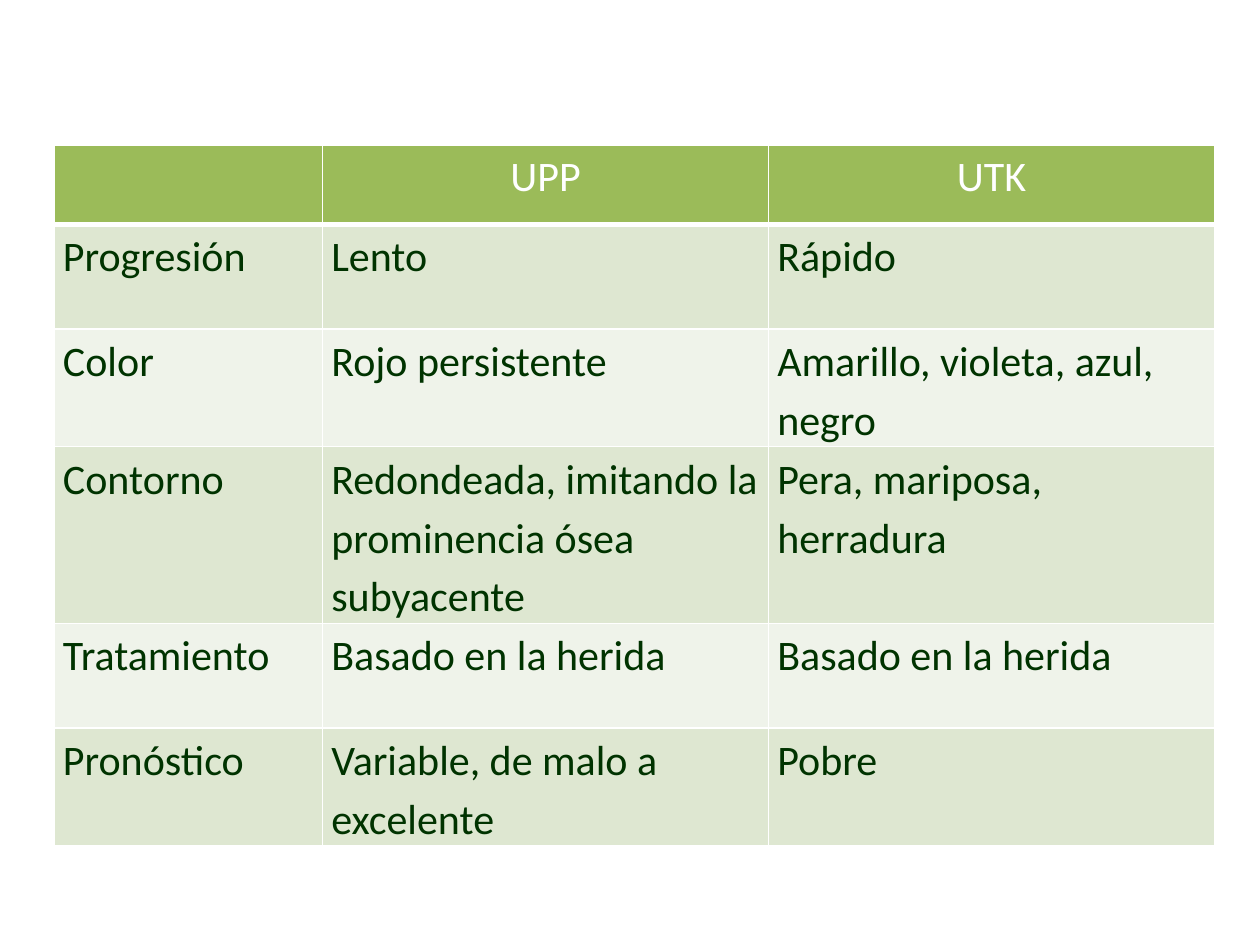
from dataclasses import dataclass

from lxml import etree
from pptx import Presentation, util as u
from pptx.dml.color import RGBColor
from pptx.enum import text
from pptx.oxml.ns import qn


@dataclass(frozen=True)
class Theme:
    font: str = "Calibri"
    size: int = 24
    header: str = "9BBB59"
    bands: tuple[str, str] = ("DEE7D1", "EFF3EA")
    ink: str = "003300"
    white: str = "FFFFFF"
    rule: float = 1
    header_rule: float = 3


@dataclass(frozen=True)
class Grid:
    """Table grid, in percent of the slide's width and height."""
    left: float
    top: float
    columns: tuple[float, ...]
    header_row: float
    body_row: float


@dataclass(frozen=True)
class CellStyle:
    fill: str
    ink: str
    bottom_rule: float
    frame: dict
    paragraph: dict


THEME = Theme()
GRID = Grid(4.3, 15.33, (21.3, 35.4, 35.4), 8.4, 11.07)

HEADER = CellStyle(THEME.header, THEME.white, THEME.header_rule, {},
                   {"alignment": text.PP_ALIGN.CENTER})
BODY = [
    CellStyle(fill, THEME.ink, THEME.rule,
              {"margin_left": u.Inches(0.07), "margin_right": u.Inches(0.07),
               "margin_top": 0, "margin_bottom": 0},
              {"line_spacing": 1.15})
    for fill in THEME.bands
]

ROWS = [
    ("", "UPP", "UTK"),
    ("Progresión", "Lento", "Rápido"),
    ("Color", "Rojo persistente", "Amarillo, violeta, azul, negro"),
    ("Contorno", "Redondeada, imitando la prominencia ósea subyacente",
     "Pera, mariposa, herradura"),
    ("Tratamiento", "Basado en la herida", "Basado en la herida"),
    ("Pronóstico", "Variable, de malo a excelente", "Pobre"),
]


def set_all(target, values: dict) -> None:
    for name, value in values.items():
        setattr(target, name, value)


def add_borders(cell, bottom_rule: float) -> None:
    tc_pr = cell._tc.get_or_add_tcPr()
    for side in "LRTB":
        width = bottom_rule if side == "B" else THEME.rule
        ln = etree.SubElement(tc_pr, qn(f"a:ln{side}"), w=str(u.Pt(width)))
        fill = etree.SubElement(ln, qn("a:solidFill"))
        etree.SubElement(fill, qn("a:srgbClr"), val=THEME.white)


def fill_cell(cell, content: str, style: CellStyle) -> None:
    add_borders(cell, style.bottom_rule)
    cell.fill.solid()
    cell.fill.fore_color.rgb = RGBColor.from_string(style.fill)
    set_all(cell, style.frame)
    p = cell.text_frame.paragraphs[0]
    set_all(p, style.paragraph)
    if content:
        r = p.add_run()
        r.text = content
        set_all(r.font, {"name": THEME.font, "size": u.Pt(THEME.size), "bold": False})
        r.font.color.rgb = RGBColor.from_string(style.ink)


def add_comparison(prs, s, grid: Grid, rows: list[tuple[str, ...]]) -> None:
    def across(share: float) -> int:
        return round(prs.slide_width * share / 100)

    def down(share: float) -> int:
        return round(prs.slide_height * share / 100)

    heights = [grid.header_row] + [grid.body_row] * (len(rows) - 1)
    table = s.shapes.add_table(
        len(rows), len(grid.columns), across(grid.left), down(grid.top),
        across(sum(grid.columns)), down(sum(heights))).table
    for column, share in zip(table.columns, grid.columns):
        column.width = across(share)
    for i, (row, share, contents) in enumerate(zip(table.rows, heights, rows)):
        row.height = down(share)
        style = BODY[(i - 1) % len(BODY)] if i else HEADER
        for cell, content in zip(row.cells, contents):
            fill_cell(cell, content, style)


def main() -> None:
    prs = Presentation()
    prs.slide_width, prs.slide_height = u.Inches(10), u.Inches(7.5)
    s = prs.slides.add_slide(prs.slide_layouts[6])
    add_comparison(prs, s, GRID, ROWS)
    prs.save("out.pptx")


if __name__ == "__main__":
    main()
